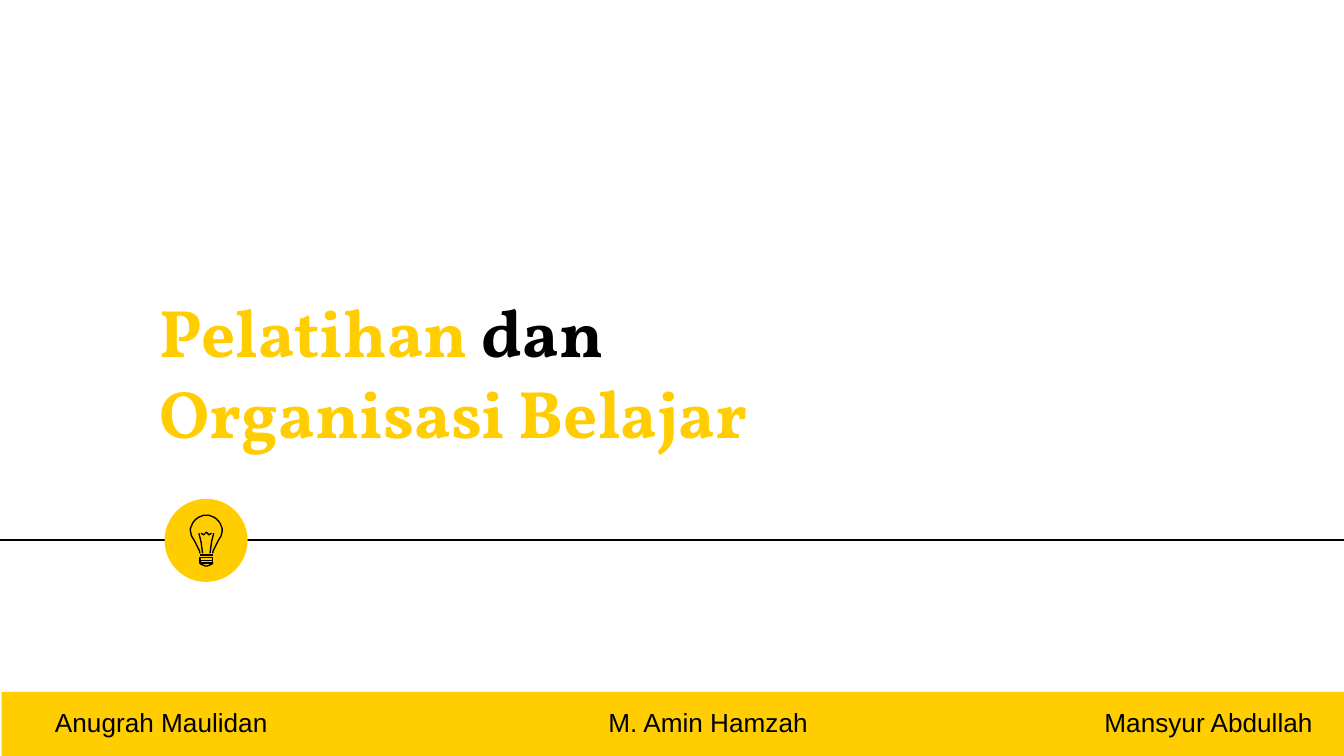
from math import cos, radians, sin

from lxml.etree import SubElement
from pptx import Presentation
from pptx.dml.color import RGBColor
from pptx.enum.shapes import MSO_CONNECTOR, MSO_SHAPE
from pptx.enum.text import MSO_ANCHOR
from pptx.oxml.ns import qn
from pptx.util import Cm, Pt

YELLOW, BLACK = "FFCD00", "000000"


def rgb(value):
    return RGBColor.from_string(value)


class Deck:
    """Holds the style and the current slide, and draws each kind of element."""

    title_font, body_font = "Vollkorn", "Arial"
    line_width = Pt(0.75)

    def __init__(self, prs):
        self.s = prs.slides.add_slide(prs.slide_layouts[6])

    def stroke(self, line):
        line.color.rgb = rgb(BLACK)
        line.width = self.line_width

    def line(self, shapes, x1, y1, x2, y2):
        c = shapes.add_connector(MSO_CONNECTOR.STRAIGHT, Cm(x1), Cm(y1), Cm(x2), Cm(y2))
        self.stroke(c.line)
        SubElement(c._element.spPr, qn("a:effectLst"))

    def block(self, kind, x, y, w, h):
        sp = self.s.shapes.add_shape(kind, Cm(x), Cm(y), Cm(w), Cm(h))
        sp.shadow.inherit = False
        sp.fill.solid()
        sp.fill.fore_color.rgb = rgb(YELLOW)
        sp.line.fill.background()

    def outline(self, shapes, x, y, points, closed=False):
        builder = shapes.build_freeform(*points[0], scale=Cm(0.01))
        builder.add_line_segments(points[1:], close=closed)
        sp = builder.convert_to_shape(Cm(x), Cm(y))
        sp.shadow.inherit = False
        sp.fill.background()
        self.stroke(sp.line)

    def text(self, x, y, w, h, runs, font, size, bold=False,
             anchor=MSO_ANCHOR.TOP, inset=(0.25, 0.13), tabs=()):
        tf = self.s.shapes.add_textbox(Cm(x), Cm(y), Cm(w), Cm(h)).text_frame
        tf.word_wrap = True
        tf.vertical_anchor = anchor
        tf.margin_left = tf.margin_right = Cm(inset[0])
        tf.margin_top = tf.margin_bottom = Cm(inset[1])
        p = tf.paragraphs[0]
        if tabs:
            stops = SubElement(p._p.get_or_add_pPr(), qn("a:tabLst"))
            for position, align in tabs:
                SubElement(stops, qn("a:tab"), pos=str(Cm(position)), algn=align)
        for content, color in runs:
            r = p.add_run()
            r.text = content
            r.font.name, r.font.size, r.font.bold = font, Pt(size), bold
            r.font.color.rgb = rgb(color)

    def bulb(self, x, y):
        shapes = self.s.shapes.add_group_shape().shapes
        flank = [(12, 72), (13, 67), (16, 61), (22, 49), (28, 39)]
        dome = [(round(30 * cos(radians(a))), round(30 - 30 * sin(radians(a))))
                for a in range(0, 181, 10)]
        self.outline(shapes, x, y, flank + dome + [(-dx, dy) for dx, dy in flank[::-1]])
        for side in (-1, 1):
            self.outline(shapes, x, y, [(side * 14, 34), (side * 10, 50), (side * 7, 72)])
        self.outline(shapes, x, y, [(-10, 34), (-5, 37), (0, 32), (5, 37), (10, 34)])
        self.line(shapes, x - 0.12, y + 0.75, x + 0.12, y + 0.75)
        for top in (80, 85):
            band = [(-12, top), (12, top), (12, top + 5), (-12, top + 5)]
            self.outline(shapes, x, y, band, True)
        cap = [(-12, 90), (-11, 92), (-2, 96), (2, 96), (11, 92), (12, 90)]
        self.outline(shapes, x, y, cap, True)


def main():
    prs = Presentation()
    prs.slide_width, prs.slide_height = Cm(25.4), Cm(14.29)
    deck = Deck(prs)
    deck.line(deck.s.shapes, -0.03, 10.21, 25.43, 10.21)
    deck.block(MSO_SHAPE.OVAL, 3.11, 9.43, 1.57, 1.57)
    deck.block(MSO_SHAPE.RECTANGLE, 0.03, 13.08, 25.4, 1.22)
    title = [("Pelatihan ", YELLOW), ("dan ", BLACK), ("Organisasi Belajar", YELLOW)]
    deck.text(2.77, 5.56, 14.66, 3.23, title, deck.title_font, 36, True,
              MSO_ANCHOR.BOTTOM, (0.25, 0.25))
    deck.bulb(3.9, 9.74)
    names = ["Anugrah Maulidan", "\tM. Amin Hamzah", "\tMansyur Abdullah"]
    deck.text(0.79, 13.23, 24.43, 0.86, [(name, BLACK) for name in names],
              deck.body_font, 14, tabs=[(10.46, "l"), (23.77, "r")])
    prs.save("out.pptx")


if __name__ == "__main__":
    main()
